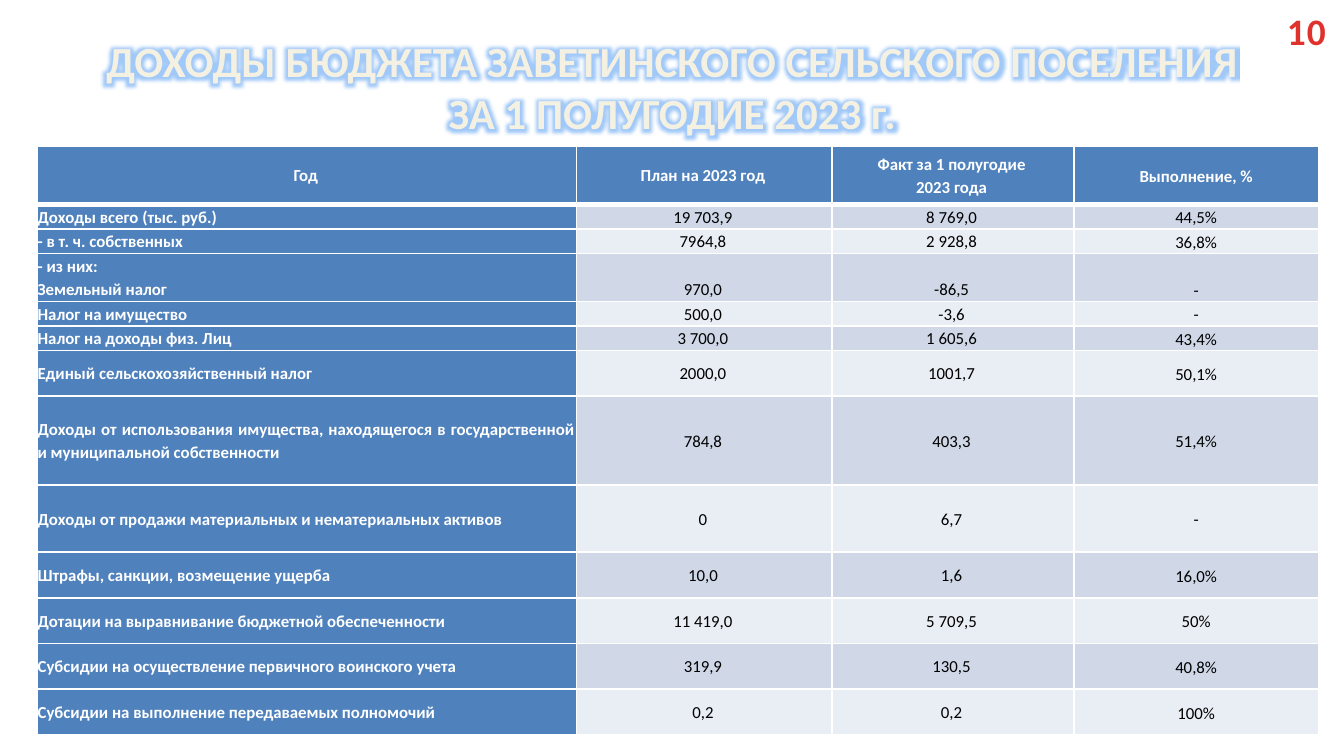
from dataclasses import dataclass

from lxml.etree import fromstring
from pptx import Presentation
from pptx.dml.color import RGBColor
from pptx.enum.text import MSO_ANCHOR as Anchor, PP_ALIGN as Align
from pptx.oxml.ns import nsdecls
from pptx.table import _Cell as Cell
from pptx.util import Inches, Pt

FONT = "Calibri"
COLORS = {
    "header": "4F81BD",
    "odd": "D0D8E8",
    "even": "E9EDF4",
    "white": "FFFFFF",
    "black": "000000",
    "title": "F4F1E3",
    "title_line": "054697",
    "glow": "A0C8F8",
    "number": "E0322D",
    "number_dark": "A2201C",
}
COLUMN_WIDTHS = (4.01, 1.9, 1.8, 1.82)


@dataclass(frozen=True)
class Income:
    """One table row; a line break in a text starts a new paragraph."""
    name: str
    plan: str
    fact: str
    done: str
    height: float = 0.34
    name_align: Align = Align.JUSTIFY
    value_anchor: Anchor = Anchor.MIDDLE


HEADER = Income("Год", "План на 2023 год", "Факт за 1 полугодие\n2023 года",
                "Выполнение, %", 0.43, Align.CENTER)
INCOMES = (
    Income("Доходы всего (тыс. руб.)", "19 703,9", "8 769,0", "44,5%", 0.18, Align.LEFT),
    Income("- в т. ч. собственных", "7964,8", "2 928,8", "36,8%", 0.18, Align.LEFT),
    Income("- из них:\nЗемельный налог", "970,0", "-86,5", "-", 0.34, Align.LEFT,
           Anchor.BOTTOM),
    Income("Налог на имущество", "500,0", "-3,6", "-", 0.18, Align.LEFT),
    Income("Налог на доходы физ. Лиц", "3 700,0", "1 605,6", "43,4%", 0.18, Align.LEFT),
    Income("Единый сельскохозяйственный налог", "2000,0", "1001,7", "50,1%"),
    Income("Доходы от использования имущества, находящегося в государственной "
           "и муниципальной собственности", "784,8", "403,3", "51,4%", 0.66),
    Income("Доходы от продажи материальных и нематериальных активов",
           "0", "6,7", "-", 0.5),
    Income("Штрафы, санкции, возмещение ущерба", "10,0", "1,6", "16,0%"),
    Income("Дотации на выравнивание бюджетной обеспеченности",
           "11 419,0", "5 709,5", "50%"),
    Income("Субсидии на осуществление первичного воинского учета",
           "319,9", "130,5", "40,8%"),
    Income("Субсидии на выполнение передаваемых полномочий", "0,2", "0,2", "100%"),
)


def rgb(name: str) -> RGBColor:
    return RGBColor.from_string(COLORS[name])


def write(frame, text: str, size: float, color: str, bold: bool,
          align: Align, spacing: float = 1.0) -> list:
    """Write one paragraph per line of text and return the runs."""
    runs = []
    for index, line in enumerate(text.split("\n")):
        paragraph = frame.add_paragraph() if index else frame.paragraphs[0]
        paragraph.alignment = align
        paragraph.line_spacing = spacing
        run = paragraph.add_run()
        run.text = line
        run.font.name, run.font.size, run.font.bold = FONT, Pt(size), bold
        run.font.color.rgb = rgb(color)
        runs.append(run)
    return runs


def add_borders(cell: Cell, top: float, bottom: float) -> None:
    for side, width in (("L", 1), ("R", 1), ("T", top), ("B", bottom)):
        cell._tc.get_or_add_tcPr().append(fromstring(
            f'<a:ln{side} {nsdecls("a")} w="{Pt(width)}"><a:solidFill>'
            f'<a:srgbClr val="{COLORS["white"]}"/></a:solidFill></a:ln{side}>'))


def fill_row(table, row: int, income: Income) -> None:
    table.rows[row].height = Inches(income.height)
    texts = (income.name, income.plan, income.fact, income.done)
    for column, text in enumerate(texts):
        cell = table.cell(row, column)
        is_heading = row == 0 or column == 0
        is_last = column == len(texts) - 1
        add_borders(cell, top=3 if row == 1 else 1, bottom=3 if row == 0 else 1)
        cell.fill.solid()
        cell.fill.fore_color.rgb = rgb(
            "header" if is_heading else "odd" if row % 2 else "even")
        cell.margin_left = cell.margin_top = Inches(0)
        cell.margin_right = Inches(0 if is_last else 0.02)
        cell.margin_bottom = Inches(0 if is_last else 0.01)
        cell.vertical_anchor = Anchor.MIDDLE if column == 0 else income.value_anchor
        write(cell.text_frame, text, 9, "white" if is_heading else "black",
              is_heading, Align.CENTER if column else income.name_align, 1.15)


def add_title(slide) -> None:
    box = slide.shapes.add_textbox(Inches(0.28), Inches(0.21), Inches(9.45), Inches(0.88))
    box.text_frame.word_wrap = True
    title = "ДОХОДЫ БЮДЖЕТА ЗАВЕТИНСКОГО СЕЛЬСКОГО ПОСЕЛЕНИЯ\nЗА 1 ПОЛУГОДИЕ 2023 г."
    for run in write(box.text_frame, title, 23, "title", True, Align.CENTER):
        properties = run.font._element
        properties.insert(0, fromstring(
            f'<a:ln {nsdecls("a")} w="{Pt(1)}"><a:solidFill>'
            f'<a:srgbClr val="{COLORS["title_line"]}"/></a:solidFill></a:ln>'))
        properties.insert(2, fromstring(
            f'<a:effectLst {nsdecls("a")}><a:glow rad="{Pt(10)}">'
            f'<a:srgbClr val="{COLORS["glow"]}"/></a:glow></a:effectLst>'))


def add_income_table(slide) -> None:
    rows = (HEADER, *INCOMES)
    table = slide.shapes.add_table(
        len(rows), len(COLUMN_WIDTHS), Inches(0.28), Inches(1.09),
        Inches(sum(COLUMN_WIDTHS)), Inches(sum(row.height for row in rows))).table
    for column, width in zip(table.columns, COLUMN_WIDTHS):
        column.width = Inches(width)
    for index, income in enumerate(rows):
        fill_row(table, index, income)


def add_page_number(slide) -> None:
    box = slide.shapes.add_textbox(Inches(9.47), Inches(0.01), Inches(0.5), Inches(0.44))
    box.text_frame.word_wrap = False
    number, = write(box.text_frame, "10", 20, "number", True, Align.CENTER)
    number.font._element.set("spc", "50")
    fill = number.font.fill
    fill.gradient()
    fill.gradient_angle = 270
    stops = (("number", 0.25), ("number_dark", 1.0))
    for stop, (color, position) in zip(fill.gradient_stops, stops):
        stop.color.rgb = rgb(color)
        stop.position = position


def main() -> None:
    deck = Presentation()
    deck.slide_width, deck.slide_height = Inches(10), Inches(10 * 9 / 16)
    slide = deck.slides.add_slide(deck.slide_layouts[6])
    add_title(slide)
    add_income_table(slide)
    add_page_number(slide)
    deck.save("out.pptx")


if __name__ == "__main__":
    main()
